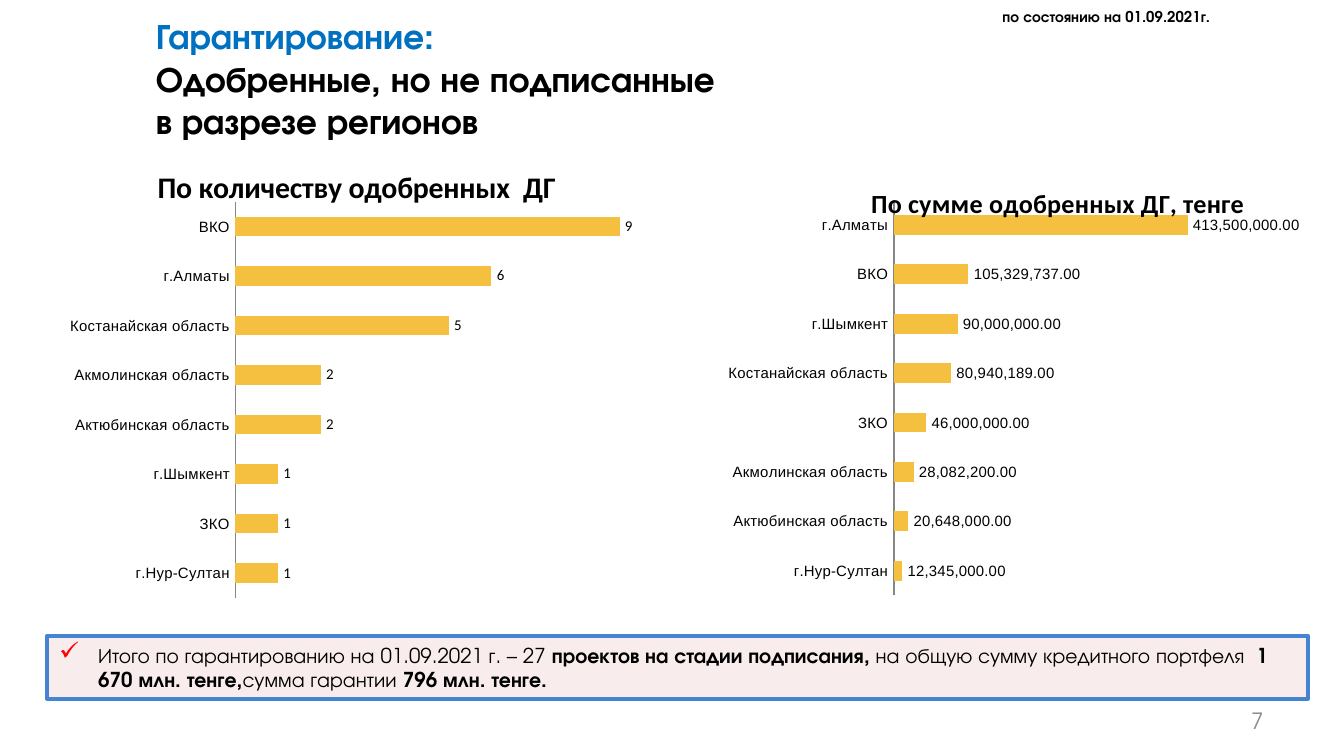
from pptx import Presentation
from pptx.chart.data import CategoryChartData
from pptx.dml.color import RGBColor
from pptx.enum.chart import XL_CHART_TYPE, XL_LABEL_POSITION, XL_TICK_MARK
from pptx.enum.shapes import MSO_SHAPE
from pptx.enum.text import MSO_ANCHOR, MSO_AUTO_SIZE, PP_ALIGN
from pptx.oxml import parse_xml
from pptx.oxml.ns import nsdecls, qn
from pptx.util import Pt

BAR = XL_CHART_TYPE.BAR_CLUSTERED
OUTSIDE = XL_LABEL_POSITION.OUTSIDE_END
NO_TICK = XL_TICK_MARK.NONE
RECTANGLE = MSO_SHAPE.RECTANGLE
MIDDLE = MSO_ANCHOR.MIDDLE
NO_AUTOFIT = MSO_AUTO_SIZE.NONE
LEFT, RIGHT = PP_ALIGN.LEFT, PP_ALIGN.RIGHT

HEADING_FONT = "TeX Gyre Adventor"
BLACK, BLUE, GRAY, GOLD = "000000", "0070C0", "8C8C8C", "F5C040"

COUNTS = [
    ("г.Нур-Султан", 1), ("ЗКО", 1), ("г.Шымкент", 1),
    ("Актюбинская область", 2), ("Акмолинская область", 2),
    ("Костанайская область", 5), ("г.Алматы", 6), ("ВКО", 9),
]
AMOUNTS = [
    ("г.Нур-Султан", 12345000), ("Актюбинская область", 20648000),
    ("Акмолинская область", 28082200), ("ЗКО", 46000000),
    ("Костанайская область", 80940189), ("г.Шымкент", 90000000),
    ("ВКО", 105329737), ("г.Алматы", 413500000),
]
SUMMARY = [
    ("Итого по гарантированию на 01.09.2021 г. – 27 ", False),
    ("проектов на стадии подписания, ", True),
    ("на общую сумму кредитного портфеля  ", False),
    ("1 670 млн. тенге,", True),
    ("сумма гарантии ", False),
    ("796 млн. тенге.", True),
]


def rgb(color):
    return RGBColor.from_string(color)


def style(font, size, name=HEADING_FONT, color=BLACK, bold=False):
    font.size, font.name, font.bold = Pt(size), name, bold
    font.color.rgb = rgb(color)


def place(shape, left, top, width, height):
    shape.left, shape.top = Pt(left), Pt(top)
    shape.width, shape.height = Pt(width), Pt(height)


def add_title(slide):
    title = slide.shapes.title
    place(title, 76.3, 26.6, 648, 49.7)
    frame = title.text_frame
    frame.auto_size = NO_AUTOFIT
    frame.vertical_anchor = MIDDLE
    frame.margin_bottom = Pt(23)
    frame.text = "Гарантирование: \vОдобренные, но не подписанные\vв разрезе регионов"
    heading = frame.paragraphs[0]
    heading.alignment = LEFT
    for run, color in zip(heading.runs, (BLUE, BLACK, BLACK)):
        style(run.font, 19, color=color, bold=True)


def add_label(slide, text, box, size, color=BLACK, bold=False, align=LEFT):
    label = slide.shapes.add_textbox(*map(Pt, box))
    frame = label.text_frame
    frame.word_wrap = True
    frame.vertical_anchor = MIDDLE
    frame.text = text
    paragraph = frame.paragraphs[0]
    paragraph.alignment = align
    style(paragraph.runs[0].font, size, color=color, bold=bold)


def set_layout(parent, index, x, y, size=None):
    """Put a manual layout, in fractions of the chart, at a child index."""
    for old in parent.findall(qn("c:layout")):
        parent.remove(old)
    parts = [("xMode", "edge"), ("yMode", "edge"), ("x", x), ("y", y)]
    if size:
        parts = [("layoutTarget", "inner"), *parts, ("w", size[0]), ("h", size[1])]
    body = "".join(f'<c:{tag} val="{value}"/>' for tag, value in parts)
    parent.insert(index, parse_xml(
        f'<c:layout {nsdecls("c")}><c:manualLayout>{body}</c:manualLayout></c:layout>'))


def add_region_chart(slide, regions, box, title, title_size, title_at, plot_box,
                     axis_max, axis_width, number_format, label_font):
    data = CategoryChartData()
    data.categories = [region for region, _ in regions]
    data.add_series("Series 1", [value for _, value in regions])
    chart = slide.shapes.add_chart(BAR, *map(Pt, box), data).chart
    style(chart.font, 10, "Calibri")
    chart.has_legend = False

    chart.has_title = True
    chart.chart_title.text_frame.text = title
    heading = chart.chart_title.text_frame.paragraphs[0]
    style(heading.runs[0].font, title_size, "Calibri", bold=True)
    set_layout(chart.chart_title._element, 1, *title_at)
    x, y, *size = plot_box
    set_layout(chart._chartSpace.chart.plotArea, 0, x, y, size)

    region_axis, value_axis = chart.category_axis, chart.value_axis
    region_axis.major_tick_mark = NO_TICK
    region_axis.format.line.color.rgb = rgb("868686")
    region_axis.format.line.width = Pt(axis_width)
    style(region_axis.tick_labels.font, 8, "Arial")
    value_axis.visible = False
    value_axis.has_major_gridlines = False
    value_axis.minimum_scale, value_axis.maximum_scale = 0, axis_max

    plot = chart.plots[0]
    plot.gap_width = 150
    plot.vary_by_categories = False
    bars = plot.series[0].format.fill
    bars.solid()
    bars.fore_color.rgb = rgb(GOLD)
    plot.has_data_labels = True
    labels = plot.data_labels
    labels.show_value = True
    labels.position = OUTSIDE
    labels.number_format = number_format
    labels.number_format_is_linked = False
    style(labels.font, 8, label_font)


def add_check_bullet(paragraph):
    properties = paragraph._p.get_or_add_pPr()
    properties.set("marL", str(Pt(21.6)))
    properties.set("indent", str(Pt(-20.9)))
    for bullet in ('<a:buClr {}><a:srgbClr val="FF0000"/></a:buClr>',
                   '<a:buSzPct {} val="125000"/>', '<a:buChar {} char="✓"/>'):
        properties.append(parse_xml(bullet.format(nsdecls("a"))))


def add_summary(slide):
    panel = slide.shapes.add_shape(RECTANGLE, Pt(25.2), Pt(340.6), Pt(675.4), Pt(33.8))
    panel.shadow.inherit = False
    panel.fill.solid()
    panel.fill.fore_color.rgb = rgb("F2DCDB")
    tint = panel._element.spPr.find(".//" + qn("a:srgbClr"))
    tint.append(parse_xml(f'<a:alpha {nsdecls("a")} val="50000"/>'))
    panel.line.color.rgb = rgb("4584D3")
    panel.line.width = Pt(2)
    frame = panel.text_frame
    frame.word_wrap = True
    frame.vertical_anchor = MIDDLE
    frame.margin_left = frame.margin_right = Pt(5.8)
    frame.margin_top = frame.margin_bottom = Pt(2.9)
    paragraph = frame.paragraphs[0]
    add_check_bullet(paragraph)
    paragraph.alignment = LEFT
    paragraph.space_after = Pt(6)
    for text, bold in SUMMARY:
        run = paragraph.add_run()
        run.text = text
        style(run.font, 11, bold=bold)


def main():
    deck = Presentation()
    deck.slide_width, deck.slide_height = Pt(720), Pt(405)
    slide = deck.slides.add_slide(deck.slide_layouts[5])
    add_label(slide, "7", (516.2, 375.1, 167.8, 21.6), 12, color=GRAY, align=RIGHT)
    add_title(slide)
    add_label(slide, "по состоянию на 01.09.2021г.", (529.9, 0, 164.2, 17.3), 8, bold=True)
    add_summary(slide)
    add_region_chart(slide, COUNTS, (0, 76.3, 370.8, 254.2),
                     "По количеству одобренных  ДГ", 16, (0.22, 0.04),
                     (0.34, 0.125, 0.617, 0.835), 10, 0.75, "#,##0", "Calibri")
    add_region_chart(slide, AMOUNTS, (367.9, 89.3, 356.4, 249.8),
                     "По сумме одобренных ДГ, тенге", 14, (0.27, 0.03),
                     (0.311, 0.072, 0.481, 0.848), 450000000, 1, "#,##0.00", "Arial")
    deck.save("out.pptx")


if __name__ == "__main__":
    main()
